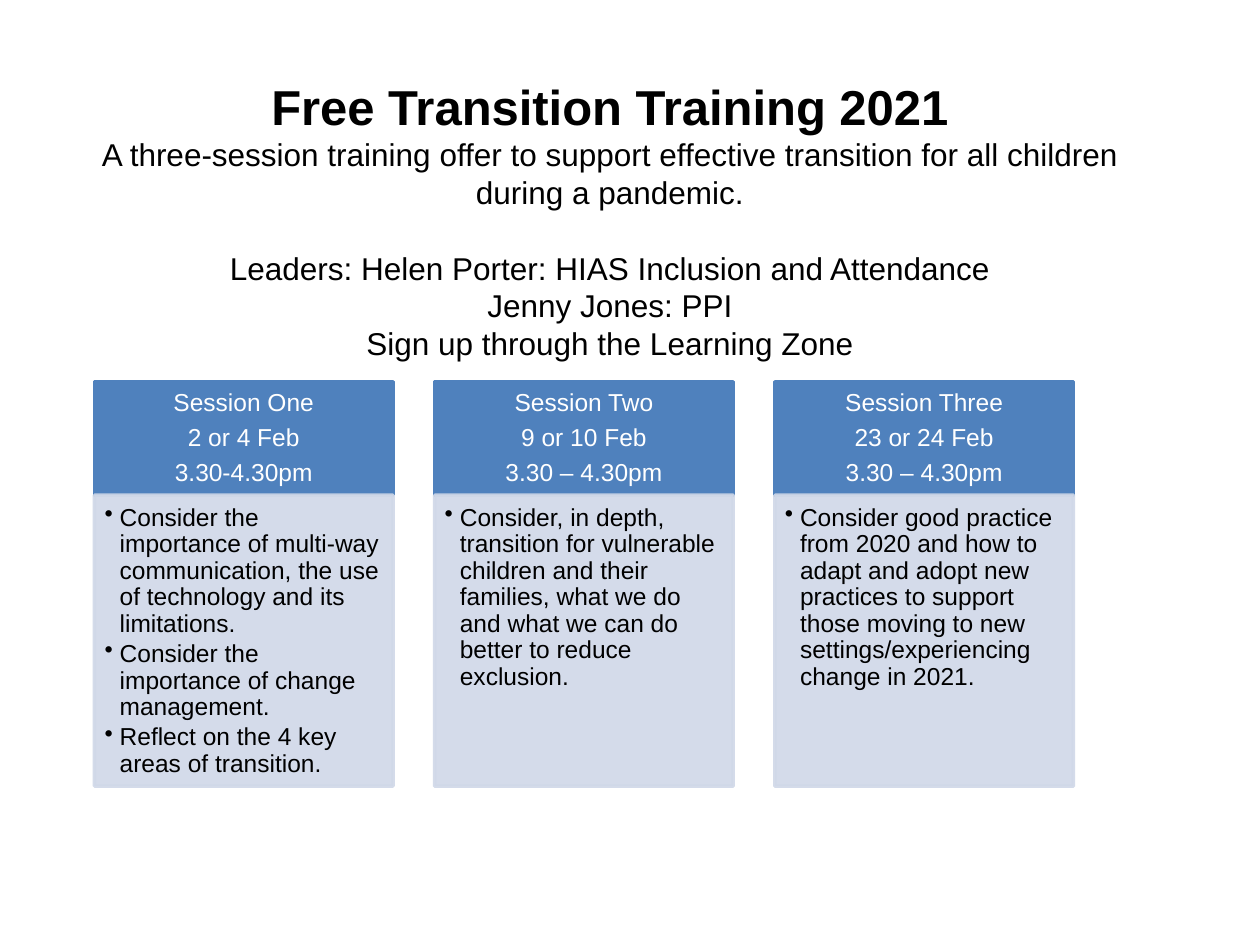
from lxml import etree
from pptx import Presentation
from pptx import util as u
from pptx.dml.color import RGBColor
from pptx.enum import shapes, text
from pptx.oxml import ns

MID = text.PP_ALIGN.CENTER
LEFT = text.PP_ALIGN.LEFT
HEAD = dict(alignment=MID, line_spacing=0.9, space_after=u.Pt(4.9))
ITEM = dict(alignment=LEFT, line_spacing=0.9, space_after=u.Pt(2.1))
LEAD = ["A three-session training offer to support effective transition "
        "for all children during a pandemic.",
        "Leaders: Helen Porter: HIAS Inclusion and Attendance",
        "Jenny Jones: PPI",
        "Sign up through the Learning Zone"]
PLAN = [
    (["Session One", "2 or 4 Feb", "3.30-4.30pm"],
     ["Consider the importance of multi-way communication, the use of "
      "technology and its limitations.",
      "Consider the importance of change management.",
      "Reflect on the 4 key areas of transition."]),
    (["Session Two", "9 or 10 Feb", "3.30 – 4.30pm"],
     ["Consider, in depth, transition for vulnerable children and their "
      "families, what we do and what we can do better to reduce exclusion."]),
    (["Session Three", "23 or 24 Feb", "3.30 – 4.30pm"],
     ["Consider good practice from 2020 and how to adapt and adopt new "
      "practices to support those moving to new settings/experiencing "
      "change in 2021."]),
]


def tint(code):
    return RGBColor.from_string(code)


def apply(item, form):
    for key, val in form.items():
        setattr(item, key, val)


class Deck:
    """Holds the style and the current slide, and draws each kind of element."""

    font = "Arial"
    dark, pale, ink, white = "4F81BD", "D0D8E8", "000000", "FFFFFF"

    def __init__(self):
        self.prs = Presentation()
        apply(self.prs, dict(slide_width=u.Inches(10), slide_height=u.Inches(7.5)))
        self.slide = self.prs.slides.add_slide(self.prs.slide_layouts[5])

    def line(self, para, words, size, color, form, bold=False):
        apply(para, form)
        run = para.add_run()
        run.text = words
        apply(run.font, dict(name=self.font, size=u.Pt(size), bold=bold))
        run.font.color.rgb = tint(color)

    def title(self, main, lines, box):
        shape = self.slide.shapes.title
        apply(shape, dict(zip(("left", "top", "width", "height"), map(u.Inches, box))))
        frame = shape.text_frame
        apply(frame, dict(word_wrap=True, auto_size=text.MSO_AUTO_SIZE.NONE,
                          vertical_anchor=text.MSO_ANCHOR.MIDDLE))
        form = dict(alignment=MID)
        self.line(frame.paragraphs[0], main, 28, self.ink, form, True)
        for num, words in enumerate(lines):
            gap = dict(space_before=u.Pt(21.6 if num == 1 else 0))
            self.line(frame.add_paragraph(), words, 18, self.ink, form | gap)

    def panel(self, box, fill, pads, anchor, alpha=100):
        shape = self.slide.shapes.add_shape(shapes.MSO_SHAPE.RECTANGLE, *map(u.Inches, box))
        shape.shadow.inherit = False
        shape.line.width = u.Pt(2)
        for paint in (shape.fill, shape.line.fill):
            paint.solid()
            paint.fore_color.rgb = tint(fill)
        if alpha < 100:
            for node in shape._element.spPr.iter(ns.qn("a:srgbClr")):
                etree.SubElement(node, ns.qn("a:alpha"), val=str(alpha * 1000))
        frame = shape.text_frame
        sides = ("margin_left", "margin_top", "margin_right", "margin_bottom")
        apply(frame, dict(zip(sides, map(u.Inches, pads))))
        apply(frame, dict(word_wrap=True, vertical_anchor=anchor))
        return frame

    def fill(self, frame, lines, color, form, mark=False):
        for num, words in enumerate(lines):
            para = frame.add_paragraph() if num else frame.paragraphs[0]
            if mark:
                self.bullet(para)
            self.line(para, words, 14, color, form)

    def bullet(self, para):
        props = para._p.get_or_add_pPr()
        dent = u.Inches(0.12)
        props.set("marL", str(dent))
        props.set("indent", str(-dent))
        etree.SubElement(props, ns.qn("a:buChar"), char="•")

    def session(self, left, head, items):
        wide, top, high = 2.37, 3.03, 0.9
        frame = self.panel((left, top, wide, high), self.dark,
                           (0.11, 0.06, 0.11, 0.06), text.MSO_ANCHOR.MIDDLE)
        self.fill(frame, head, self.white, HEAD)
        frame = self.panel((left, top + high, wide, 2.31), self.pale,
                           (0.08, 0.08, 0.11, 0.12), text.MSO_ANCHOR.TOP, 90)
        self.fill(frame, items, self.ink, ITEM, True)


def main():
    deck = Deck()
    deck.title("Free Transition Training 2021", LEAD, (0.59, 1.15, 8.5, 1.18))
    for num, (head, items) in enumerate(PLAN):
        deck.session(0.75 + 2.7 * num, head, items)
    deck.prs.save("out.pptx")


if __name__ == "__main__":
    main()
